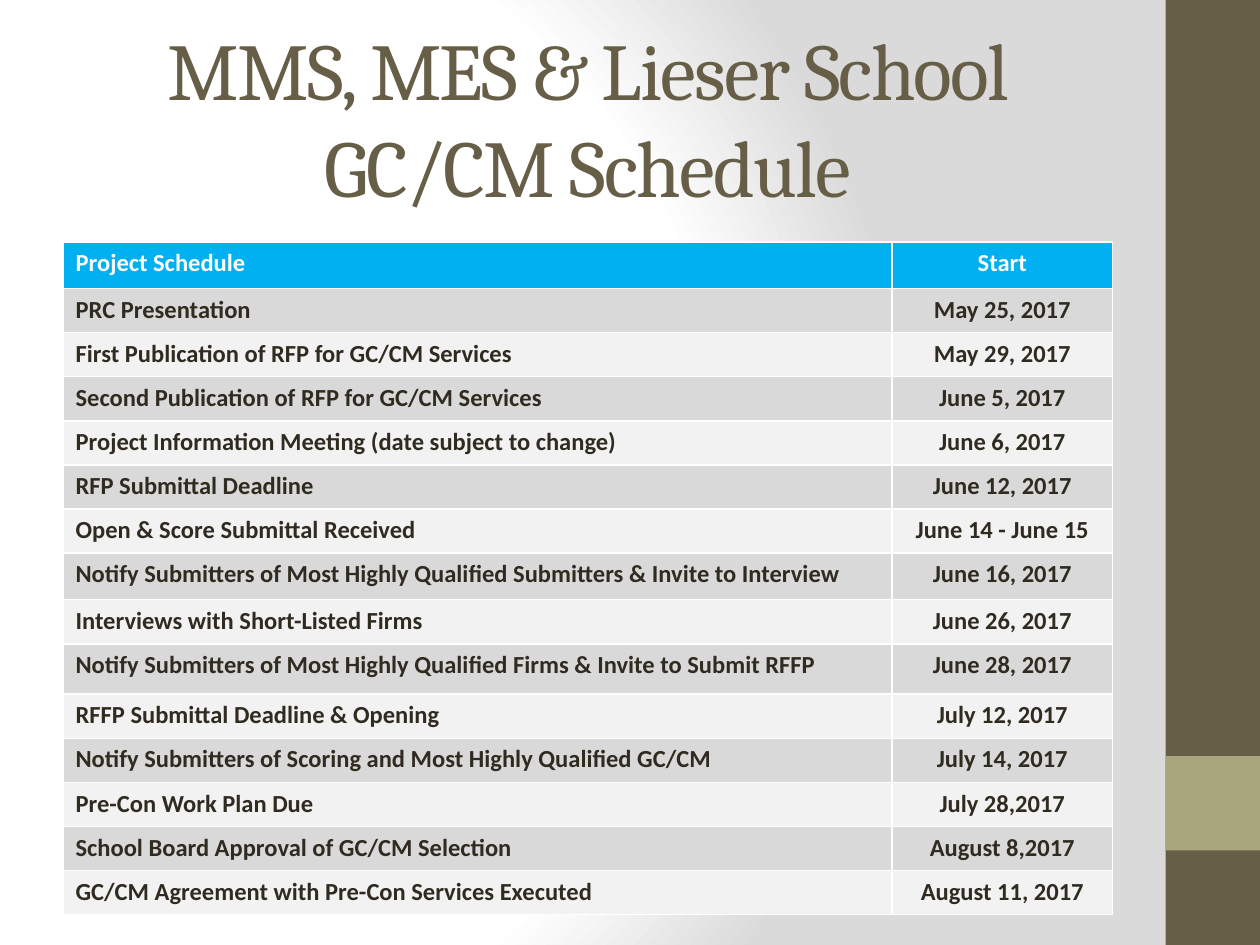
from pptx import Presentation
from pptx.dml.color import RGBColor
from pptx.enum.shapes import MSO_SHAPE as Shape
from pptx.enum.text import MSO_ANCHOR as Anchor, PP_ALIGN as Align
from pptx.oxml import parse_xml
from pptx.oxml.ns import nsdecls
from pptx.util import Inches, Pt

BROWN = RGBColor(0x67, 0x5E, 0x47)
KHAKI = RGBColor(0xA9, 0xA5, 0x7C)
INK = RGBColor(0x2F, 0x2B, 0x20)
WHITE = RGBColor(0xFF, 0xFF, 0xFF)
BLUE = RGBColor(0x00, 0xB0, 0xF0)
GREY = RGBColor(0xD9, 0xD9, 0xD9)
PALE = RGBColor(0xF2, 0xF2, 0xF2)
SILVER = RGBColor(0xDA, 0xDA, 0xDA)

LEFT, WIDTH = 0.5, 8.33
ROW_HEIGHT = 0.35
TALL_ROWS = {0: 0.37, 7: 0.37, 9: 0.4}

SCHEDULE = [
    ("Project Schedule", "Start"),
    ("PRC Presentation", "May 25, 2017"),
    ("First Publication of RFP for GC/CM Services", "May 29, 2017"),
    ("Second Publication of RFP for GC/CM Services", "June 5, 2017"),
    ("Project Information Meeting (date subject to change)", "June 6, 2017"),
    ("RFP Submittal Deadline", "June 12, 2017"),
    ("Open & Score Submittal Received", "June 14 - June 15"),
    ("Notify Submitters of Most Highly Qualified Submitters & Invite to Interview", "June 16, 2017"),
    ("Interviews with Short-Listed Firms", "June 26, 2017"),
    ("Notify Submitters of Most Highly Qualified Firms & Invite to Submit RFFP", "June 28, 2017"),
    ("RFFP Submittal Deadline & Opening", "July 12, 2017"),
    ("Notify Submitters of Scoring and Most Highly Qualified GC/CM", "July 14, 2017"),
    ("Pre-Con Work Plan Due", "July 28,2017"),
    ("School Board Approval of GC/CM Selection", "August 8,2017"),
    ("GC/CM Agreement with Pre-Con Services Executed", "August 11, 2017"),
]


def write(frame, text, *, font="Calibri", size=14, color=INK, bold=False,
          align=Align.LEFT, spacing=None):
    """Put one formatted paragraph in a text frame; spacing is in points."""
    paragraph = frame.paragraphs[0]
    paragraph.alignment = align
    run = paragraph.add_run()
    run.text = text
    run.font.name = font
    run.font.size = Pt(size)
    run.font.bold = bold
    run.font.color.rgb = color
    if spacing is not None:
        run.font._element.set("spc", str(int(spacing * 100)))


def add_borders(cell, sides):
    """Draw white 1 pt lines on the given sides, in the order L, R, T, B."""
    properties = cell._tc.get_or_add_tcPr()
    for side in sides:
        properties.append(parse_xml(
            f'<a:ln{side} {nsdecls("a")} w="{Pt(1)}"><a:solidFill>'
            f'<a:srgbClr val="{WHITE}"/></a:solidFill></a:ln{side}>'))


class ScheduleSlide:
    def __init__(self, slide):
        self.slide = slide

    def background(self):
        stops = "".join(
            f'<a:gs pos="{percent * 1000}"><a:srgbClr val="{color}"/></a:gs>'
            for percent, color in ((0, WHITE), (75, WHITE), (100, SILVER)))
        self.slide._element.cSld.insert(0, parse_xml(
            f'<p:bg {nsdecls("p", "a")}><p:bgPr><a:gradFill rotWithShape="1">'
            f'<a:gsLst>{stops}</a:gsLst><a:path path="circle">'
            '<a:fillToRect l="20000" t="50000" r="100000" b="50000"/></a:path>'
            '</a:gradFill><a:effectLst/></p:bgPr></p:bg>'))

    def side_band(self, top, height, color):
        band = self.slide.shapes.add_shape(
            Shape.RECTANGLE, Inches(9.25), Inches(top), Inches(0.75), Inches(height))
        band.shadow.inherit = False
        band.fill.solid()
        band.fill.fore_color.rgb = color
        band.line.fill.background()

    def title(self, text):
        title = self.slide.shapes.title
        title.left, title.top = Inches(LEFT), Inches(0.3)
        title.width, title.height = Inches(WIDTH), Inches(1.25)
        title.text_frame.word_wrap = True
        title.text_frame.vertical_anchor = Anchor.MIDDLE
        write(title.text_frame, text, font="Cambria", size=46, color=BROWN,
              align=Align.CENTER, spacing=-1)

    def table(self, rows, column_widths):
        heights = [TALL_ROWS.get(i, ROW_HEIGHT) for i in range(len(rows))]
        table = self.slide.shapes.add_table(
            len(rows), len(column_widths), Inches(LEFT), Inches(1.92),
            Inches(WIDTH), Inches(sum(heights))).table
        for column, width in zip(table.columns, column_widths):
            column.width = Inches(width)
        for i, (row, height, texts) in enumerate(zip(table.rows, heights, rows)):
            row.height = Inches(height)
            fill = BLUE if i == 0 else (PALE, GREY)[i % 2]
            for j, (cell, text) in enumerate(zip(row.cells, texts)):
                add_borders(cell, "LRTB" if j else "RTB")
                cell.fill.solid()
                cell.fill.fore_color.rgb = fill
                write(cell.text_frame, text, bold=True,
                      color=INK if i else WHITE,
                      align=Align.CENTER if j else Align.LEFT)


def main():
    deck = Presentation()
    deck.slide_width, deck.slide_height = Inches(10), Inches(7.5)
    page = ScheduleSlide(deck.slides.add_slide(deck.slide_layouts[5]))
    page.background()
    page.side_band(0, 7.5, BROWN)
    page.side_band(6, 0.75, KHAKI)
    page.title("MMS, MES & Lieser School GC/CM Schedule")
    page.table(SCHEDULE, (6.58, 1.75))
    deck.save("out.pptx")


if __name__ == "__main__":
    main()
